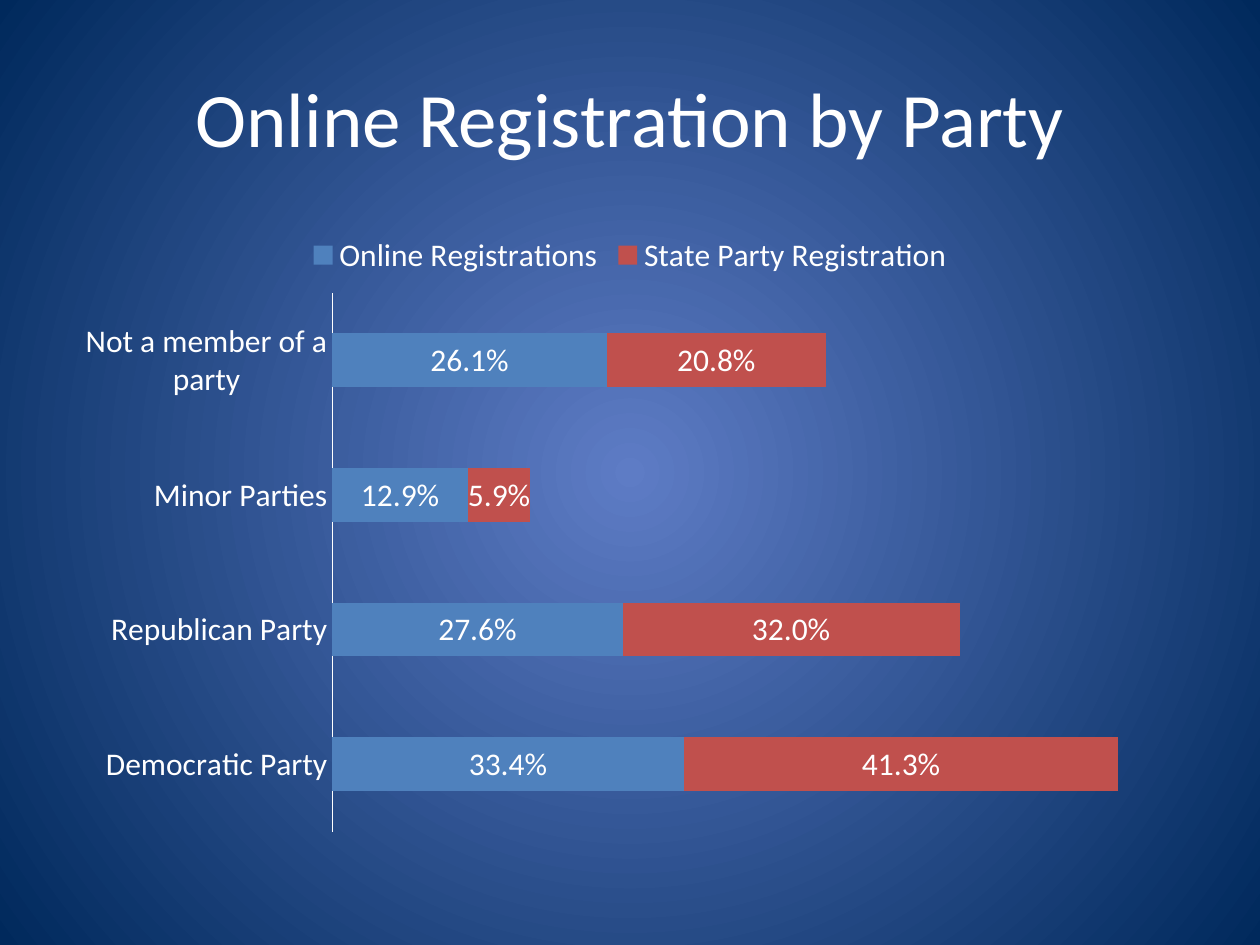
import lxml.etree
import pptx
import pptx.chart.data
import pptx.dml.color
import pptx.enum.chart
import pptx.enum.text
import pptx.oxml.ns
import pptx.util

Pt = pptx.util.Pt
FONT = "Calibri"
WHITE = "FFFFFF"
PARTIES = ["Democratic Party", "Republican Party", "Minor Parties", "Not a member of a party"]
SERIES = [
    ("Online Registrations", "4F81BD", [0.334, 0.276, 0.129, 0.261]),
    ("State Party Registration", "C0504D", [0.413, 0.32, 0.059, 0.208]),
]


def rgb(value):
    return pptx.dml.color.RGBColor.from_string(value)


def style_font(font, size):
    font.name = FONT
    font.size = Pt(size)
    font.color.rgb = rgb(WHITE)


def set_radial_background(s, inner, outer):
    fill = s.background.fill
    fill.gradient()
    for stop, color, position in zip(fill.gradient_stops, (inner, outer), (0, 1)):
        stop.color.rgb = rgb(color)
        stop.position = position
    qn = pptx.oxml.ns.qn
    grad = s.element.find(".//" + qn("a:gradFill"))
    lin = grad.find(qn("a:lin"))
    radial = lxml.etree.Element(qn("a:path"), path="circle")
    sides = dict.fromkeys("ltrb", "50000")
    lxml.etree.SubElement(radial, qn("a:fillToRect"), sides)
    grad.replace(lin, radial)


def set_title(s, text):
    sp = s.shapes.title
    sp.left, sp.top, sp.width, sp.height = Pt(36), Pt(21.6), Pt(648), Pt(90)
    tf = sp.text_frame
    tf.text = text
    tf.vertical_anchor = pptx.enum.text.MSO_ANCHOR.MIDDLE
    p = tf.paragraphs[0]
    p.alignment = pptx.enum.text.PP_ALIGN.CENTER
    style_font(p.runs[0].font, 44)


def format_axes(chart):
    axis = chart.category_axis
    axis.major_tick_mark = pptx.enum.chart.XL_TICK_MARK.NONE
    axis.format.line.color.rgb = rgb(WHITE)
    axis.format.line.width = Pt(0.75)
    values = chart.value_axis
    values.visible = False
    values.has_major_gridlines = False
    values.minimum_scale = 0
    values.maximum_scale = 0.8


def format_series(series, color):
    series.format.fill.solid()
    series.format.fill.fore_color.rgb = rgb(color)
    labels = series.data_labels
    labels.show_value = True
    labels.number_format = "0.0%"
    labels.number_format_is_linked = False
    style_font(labels.font, 18)


def add_party_chart(s):
    data = pptx.chart.data.CategoryChartData(number_format="0.0%")
    data.categories = PARTIES
    for name, _, values in SERIES:
        data.add_series(name, values)
    chart = s.shapes.add_chart(
        pptx.enum.chart.XL_CHART_TYPE.BAR_STACKED,
        Pt(36), Pt(126), Pt(648), Pt(356.4), data,
    ).chart
    style_font(chart.font, 18)
    chart.has_title = False
    chart.has_legend = True
    chart.legend.position = pptx.enum.chart.XL_LEGEND_POSITION.TOP
    chart.legend.include_in_layout = False
    format_axes(chart)
    plot = chart.plots[0]
    plot.gap_width = 150
    plot.overlap = 100
    plot.vary_by_categories = False
    for series, (_, color, _) in zip(plot.series, SERIES):
        format_series(series, color)


def main():
    prs = pptx.Presentation()
    prs.slide_width, prs.slide_height = Pt(720), Pt(540)
    s = prs.slides.add_slide(prs.slide_layouts[5])
    set_radial_background(s, "5E7CC5", "00295C")
    set_title(s, "Online Registration by Party")
    add_party_chart(s)
    prs.save("out.pptx")


if __name__ == "__main__":
    main()
